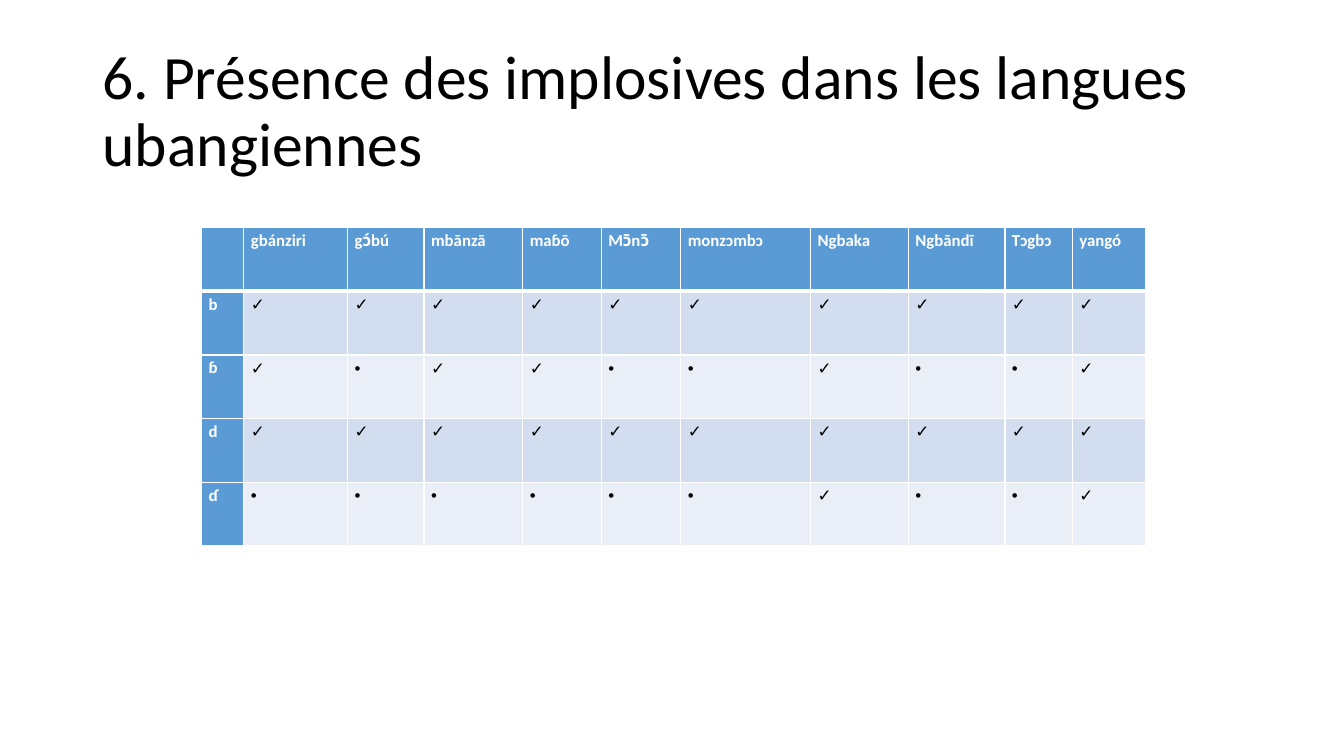
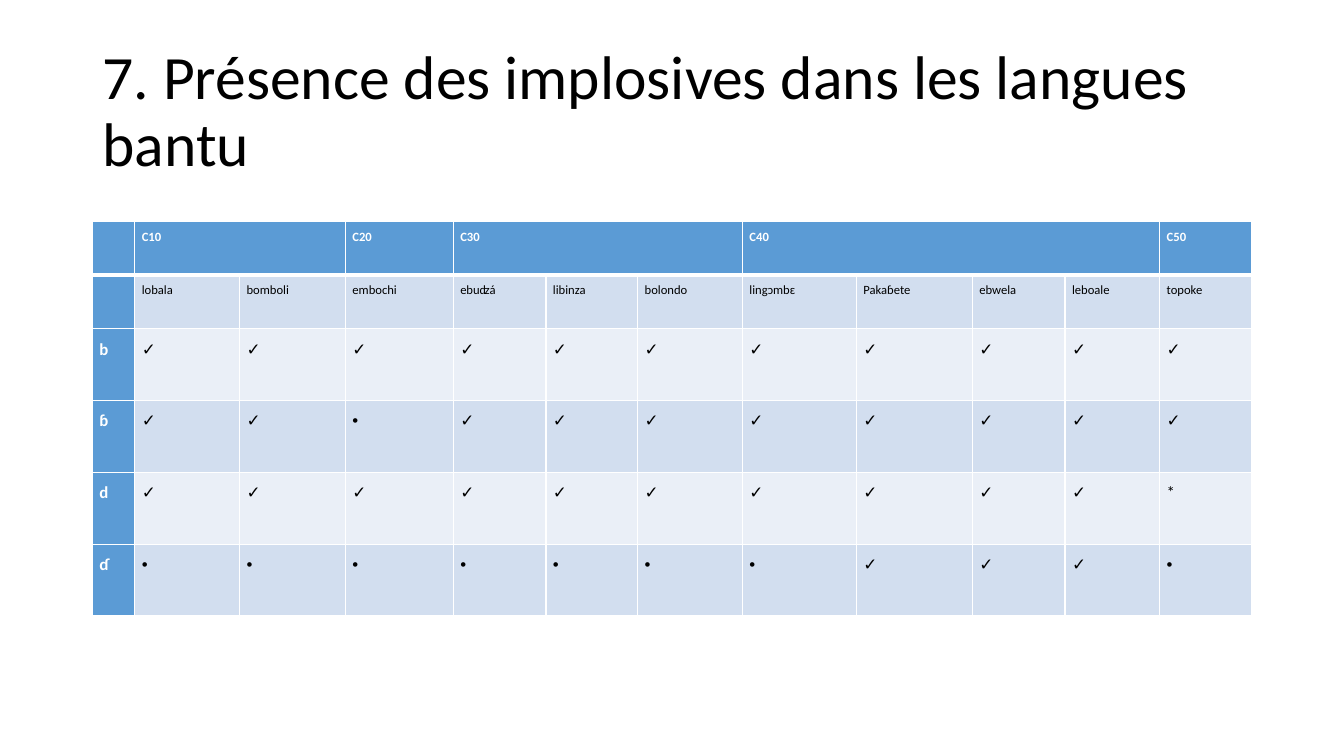
from lxml import etree
from pptx import Presentation
from pptx import util as u
from pptx.dml import color
from pptx.enum import text
from pptx.oxml import ns

HEIGHT = u.Inches(7.5)
WIDTH = HEIGHT * 16 // 9
FONT, BULLET_FONT = "Calibri", "Arial"
BLUE, WHITE, BLACK = "5B9BD5", "FFFFFF", "000000"
BANDS = ("D2DEEF", "EAEFF7")
CONSONANTS = ("b", "ɓ", "d", "ɗ")
BULLETS = ("✓", "•")

UBANGIAN = ("gbánziri", "gɔ́bú", "mbānzā", "maɓō", "Mɔ̄nɔ̄", "monzɔmbɔ",
            "Ngbaka", "Ngbāndī", "Tɔgbɔ", "yangó")
UBANGIAN_MARKS = ("✓✓✓✓✓✓✓✓✓✓", "✓•✓✓••✓••✓", "✓✓✓✓✓✓✓✓✓✓", "••••••✓••✓")
UBANGIAN_COLUMNS = (0.42, 1.03, 0.76, 0.98, 0.78, 0.79, 1.29, 0.97, 0.96, 0.67, 0.73)

BANTU = ("lobala", "bomboli", "embochi", "ebuʣá", "libinza", "bolondo",
         "lingɔmbɛ", "Pakaɓete", "ebwela", "leboale", "topoke")
BANTU_ZONES = (("C10", 2), ("C20", 1), ("C30", 3), ("C40", 4), ("C50", 1))
BANTU_MARKS = ("✓✓✓✓✓✓✓✓✓✓✓", "✓✓•✓✓✓✓✓✓✓✓", "✓✓✓✓✓✓✓✓✓✓*", "•••••••✓✓✓•")
BANTU_COLUMNS = (0.42, 1.04, 1.05, 1.07, 0.92, 0.91, 1.04, 1.13, 1.15, 0.92, 0.94, 0.91)


def rgb(value):
    """Return the colour for a hex string."""
    return color.RGBColor.from_string(value)


def area(left, top, width, height):
    """Turn percentages of the slide into a left, top, width and height."""
    return [round(side * share / 100) for side, share in
            ((WIDTH, left), (HEIGHT, top), (WIDTH, width), (HEIGHT, height))]


def format_text(frame, size, ink, bold, spacing):
    """Give every paragraph of a text frame the same look."""
    for para in frame.paragraphs:
        para.alignment = text.PP_ALIGN.LEFT
        para.line_spacing = spacing
        for span in para.runs:
            span.font.name, span.font.size = FONT, u.Pt(size)
            span.font.bold, span.font.color.rgb = bold, rgb(ink)


def add_bullet(para, symbol):
    """Put a bullet at the start of a paragraph."""
    properties = para._p.get_or_add_pPr()
    properties.set("marL", "0")
    properties.set("indent", "0")
    etree.SubElement(properties, ns.qn("a:buFont"), typeface=BULLET_FONT)
    etree.SubElement(properties, ns.qn("a:buChar"), char=symbol)


def add_page(deck, title):
    """Add a page with its title."""
    page = deck.slides.add_slide(deck.slide_layouts[5])
    box = page.shapes.title
    box.left, box.top, box.width, box.height = area(6.88, 5.32, 86.25, 19.33)
    frame = box.text_frame
    frame.text = title
    frame.auto_size = text.MSO_AUTO_SIZE.NONE
    frame.vertical_anchor = text.MSO_ANCHOR.MIDDLE
    format_text(frame, 44, BLACK, False, 0.9)
    return page


def add_borders(cell, top, bottom):
    """Draw white borders, with the top and bottom weights in points."""
    properties = cell._tc.get_or_add_tcPr()
    for side, weight in (("L", 1), ("R", 1), ("T", top), ("B", bottom)):
        line = etree.SubElement(properties, ns.qn(f"a:ln{side}"), w=str(u.Pt(weight)))
        fill = etree.SubElement(line, ns.qn("a:solidFill"))
        etree.SubElement(fill, ns.qn("a:srgbClr"), val=WHITE)


def fill_cell(cell, words, row, column, size, spacing):
    """Write one cell, styled by its place in the table."""
    heading = row == 0 or column == 0
    marked = words in BULLETS
    cell.margin_left = cell.margin_right = u.Inches(0.07)
    cell.margin_top = cell.margin_bottom = 0
    add_borders(cell, 3 if row == 1 else 1, 3 if row == 0 else 1)
    cell.fill.solid()
    cell.fill.fore_color.rgb = rgb(BLUE if heading else BANDS[(row - 1) % 2])
    frame = cell.text_frame
    frame.text = " " if marked else words
    format_text(frame, size, WHITE if heading else BLACK, heading, spacing)
    if marked:
        add_bullet(frame.paragraphs[0], words)


def add_grid(page, place, columns, heights, rows, sizes, spacing):
    """Add a table whose column and row sizes are shares of its area."""
    left, top, width, height = area(*place)
    table = page.shapes.add_table(
        len(rows), len(columns), left, top, width, height).table
    for column, weight in zip(table.columns, columns):
        column.width = round(width * weight / sum(columns))
    for row, weight in zip(table.rows, heights):
        row.height = round(height * weight / sum(heights))
    for r, (words, size) in enumerate(zip(rows, sizes)):
        for c, word in enumerate(words):
            fill_cell(table.cell(r, c), word, r, c, size, spacing)
    return table


def mark_rows(marks):
    """Put each consonant in front of its row of marks."""
    return [[consonant, *row] for consonant, row in zip(CONSONANTS, marks)]


def merge_zones(table, zones):
    """Join the heading cells of each language zone."""
    start = 1
    for _, count in zones:
        if count > 1:
            table.cell(0, start).merge(table.cell(0, start + count - 1))
        start += count


def main():
    """Build and save the deck."""
    deck = Presentation()
    deck.slide_width, deck.slide_height = WIDTH, HEIGHT

    page = add_page(deck, "6. Présence des implosives dans les langues ubangiennes")
    add_grid(page, (15, 30.1, 70.28, 42.15), UBANGIAN_COLUMNS, [1] * 5,
             [["", *UBANGIAN], *mark_rows(UBANGIAN_MARKS)], [12] * 5, 1.15)

    page = add_page(deck, "7. Présence des implosives dans les langues bantu")
    zones = [""]
    for name, count in BANTU_ZONES:
        zones += [name] + [""] * (count - 1)
    table = add_grid(page, (6.88, 29.33, 86.25, 52.15), BANTU_COLUMNS,
                     [0.53] * 2 + [0.71] * 4,
                     [zones, ["", *BANTU], *mark_rows(BANTU_MARKS)],
                     [9] * 2 + [12] * 4, 1.5)
    merge_zones(table, BANTU_ZONES)

    deck.save("out.pptx")


if __name__ == "__main__":
    main()
